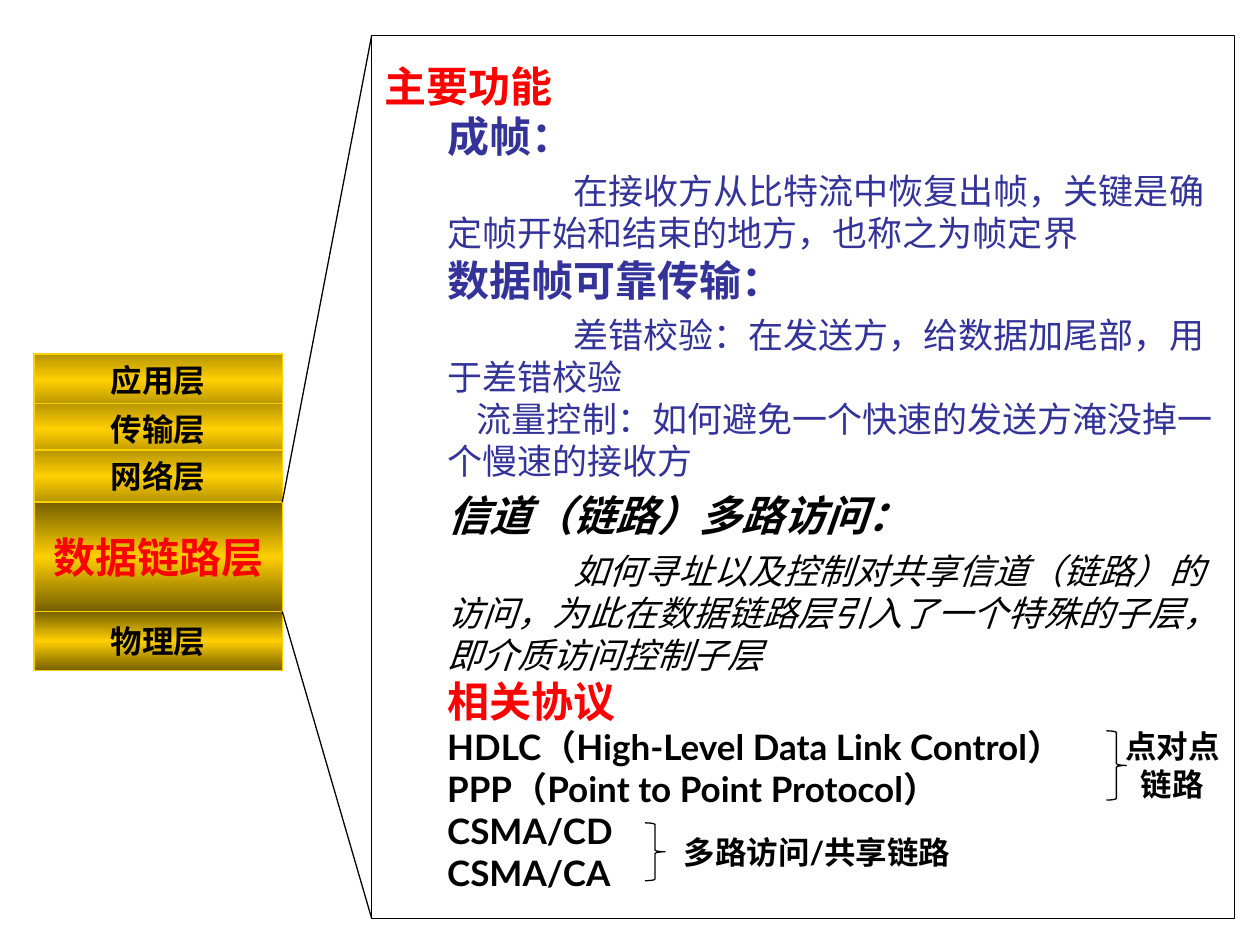
"""Build a slide that explains the data link layer beside the protocol stack."""
from copy import deepcopy

from lxml.etree import SubElement
from pptx import Presentation
from pptx.dml.color import RGBColor
from pptx.enum.shapes import MSO_CONNECTOR, MSO_SHAPE
from pptx.enum.text import MSO_ANCHOR, PP_ALIGN
from pptx.oxml.ns import qn
from pptx.util import Pt

BLACK = RGBColor(0x00, 0x00, 0x00)
WHITE = RGBColor(0xFF, 0xFF, 0xFF)
RED = RGBColor(0xFF, 0x00, 0x00)
BLUE = RGBColor(0x33, 0x33, 0x99)
GOLD = RGBColor(0xFF, 0xCF, 0x01)
AMBER = RGBColor(0xB6, 0x94, 0x01)
BROWN = RGBColor(0x76, 0x60, 0x00)

FONT = "Lato"
LINE_WIDTH = 0.75

STACK_LEFT, STACK_WIDTH = 19.5, 141.8
LAYERS = [
    ("应用层", 202.3, 29.5, AMBER, 18, BLACK),
    ("传输层", 230.4, 29.5, AMBER, 18, BLACK),
    ("网络层", 257.2, 29.5, AMBER, 18, BLACK),
    ("数据链路层", 287, 62.4, BROWN, 24, RED),
    ("物理层", 349.4, 33.8, BROWN, 18, BLACK),
]
LINK_TOP, LINK_BOTTOM = 287, 349.4

PANEL_LEFT, PANEL_TOP, PANEL_WIDTH, PANEL_HEIGHT = 212.4, 20.2, 493.2, 504.7

HEADING = {"size": 24, "bold": True}
BODY = {"size": 20, "first_indent": 72, "before": 5}
PROTOCOL = {"size": 20, "bold": True, "color": BLACK}
PANEL_TEXT = [
    ("主要功能", {**HEADING, "color": RED, "margin": 0}),
    ("成帧：", HEADING),
    ("在接收方从比特流中恢复出帧，关键是确定帧开始和结束的地方，也称之为帧定界", BODY),
    ("数据帧可靠传输：", HEADING),
    ("差错校验：在发送方，给数据加尾部，用于差错校验", BODY),
    ("流量控制：如何避免一个快速的发送方淹没掉一个慢速的接收方",
     {"size": 20, "first_indent": 17}),
    ("信道（链路）多路访问：", {**HEADING, "color": BLACK, "italic": True, "before": 5}),
    ("如何寻址以及控制对共享信道（链路）的访问，为此在数据链路层引入了一个特殊的子层，即介质访问控制子层",
     {**BODY, "color": BLACK, "italic": True}),
    ("相关协议", {**HEADING, "color": RED}),
    ("HDLC（High-Level Data Link Control）", PROTOCOL),
    ("PPP（Point to Point Protocol）", PROTOCOL),
    ("CSMA/CD", PROTOCOL),
    ("CSMA/CA", PROTOCOL),
]

BRACES = [(632.2, 417.6, 11.5, 39.6), (368.6, 470.2, 11.5, 33.1)]
BRACE_LABELS = [
    ("点对点\v链路", 632.9, 411.8, 74.2, 51.1),
    ("多路访问/共享链路", 368.6, 472.3, 196.6, 28.8),
]


def style_runs(paragraph, size, color, bold=False, italic=False):
    """Format every run of a paragraph."""
    for run in paragraph.runs:
        font = run.font
        font.name, font.size = FONT, Pt(size)
        font.bold, font.italic = bold, italic
        font.color.rgb = color


def add_outlined_shape(slide, kind, left, top, width, height, line_color=BLACK):
    """Add an unfilled preset shape with a thin outline."""
    shape = slide.shapes.add_shape(kind, Pt(left), Pt(top), Pt(width), Pt(height))
    shape.shadow.inherit = False
    shape.fill.background()
    shape.line.color.rgb = line_color
    shape.line.width = Pt(LINE_WIDTH)
    return shape


def fill_metallic(shape, edge_color):
    """Fill a shape with a vertical gradient that is gold in the middle."""
    shape.fill.gradient()
    shape.fill.gradient_angle = 90
    first = shape.fill.gradient_stops[0]._gs
    first.addnext(deepcopy(first))
    stops = zip(shape.fill.gradient_stops, (0, 0.5, 1), (edge_color, GOLD, edge_color))
    for stop, position, color in stops:
        stop.position = position
        stop.color.rgb = color


def add_layer(slide, name, top, height, edge_color, size, color):
    """Add one layer of the protocol stack."""
    shape = add_outlined_shape(
        slide, MSO_SHAPE.RECTANGLE, STACK_LEFT, top, STACK_WIDTH, height, GOLD)
    fill_metallic(shape, edge_color)
    text_frame = shape.text_frame
    text_frame.text = name
    text_frame.vertical_anchor = MSO_ANCHOR.MIDDLE
    paragraph = text_frame.paragraphs[0]
    paragraph.alignment = PP_ALIGN.CENTER
    style_runs(paragraph, size, color, bold=True)


def write_panel_paragraph(paragraph, text, size, color=BLUE, bold=False, italic=False,
                          margin=36, first_indent=0, before=0):
    """Write one paragraph of the explanation."""
    paragraph.text = text
    paragraph.alignment = PP_ALIGN.LEFT
    paragraph.space_before = Pt(before)
    properties = paragraph._p.get_or_add_pPr()
    properties.set("marL", str(Pt(margin)))
    properties.set("indent", str(Pt(first_indent)))
    style_runs(paragraph, size, color, bold, italic)


def add_panel(slide):
    """Add the framed explanation of the data link layer."""
    shape = add_outlined_shape(
        slide, MSO_SHAPE.RECTANGLE, PANEL_LEFT, PANEL_TOP, PANEL_WIDTH, PANEL_HEIGHT)
    text_frame = shape.text_frame
    text_frame.word_wrap = True
    text_frame.vertical_anchor = MSO_ANCHOR.MIDDLE
    text_frame.text = "\n".join(text for text, _ in PANEL_TEXT)
    for paragraph, (text, style) in zip(text_frame.paragraphs, PANEL_TEXT):
        write_panel_paragraph(paragraph, text, **style)


def add_zoom_line(slide, start_y, end_y):
    """Connect the stack's right edge with the panel's left edge."""
    connector = slide.shapes.add_connector(
        MSO_CONNECTOR.STRAIGHT, Pt(STACK_LEFT + STACK_WIDTH), Pt(start_y),
        Pt(PANEL_LEFT), Pt(end_y))
    connector.line.color.rgb = BLACK
    connector.line.width = Pt(LINE_WIDTH)
    SubElement(connector._element.spPr, qn("a:effectLst"))


def add_label(slide, text, left, top, width, height):
    """Add a centred label beside a brace."""
    shape = slide.shapes.add_textbox(Pt(left), Pt(top), Pt(width), Pt(height))
    shape.text_frame.word_wrap = True
    paragraph = shape.text_frame.paragraphs[0]
    paragraph.text = text
    paragraph.alignment = PP_ALIGN.CENTER
    style_runs(paragraph, 18, BLACK, bold=True)


def main():
    """Create and save the presentation."""
    presentation = Presentation()
    presentation.slide_width, presentation.slide_height = Pt(720), Pt(540)
    slide = presentation.slides.add_slide(presentation.slide_layouts[6])
    slide.background.fill.solid()
    slide.background.fill.fore_color.rgb = WHITE
    for layer in LAYERS:
        add_layer(slide, *layer)
    add_panel(slide)
    add_zoom_line(slide, LINK_TOP, PANEL_TOP)
    add_zoom_line(slide, LINK_BOTTOM, PANEL_TOP + PANEL_HEIGHT)
    for brace in BRACES:
        add_outlined_shape(slide, MSO_SHAPE.RIGHT_BRACE, *brace)
    for label in BRACE_LABELS:
        add_label(slide, *label)
    presentation.save("out.pptx")


if __name__ == "__main__":
    main()
